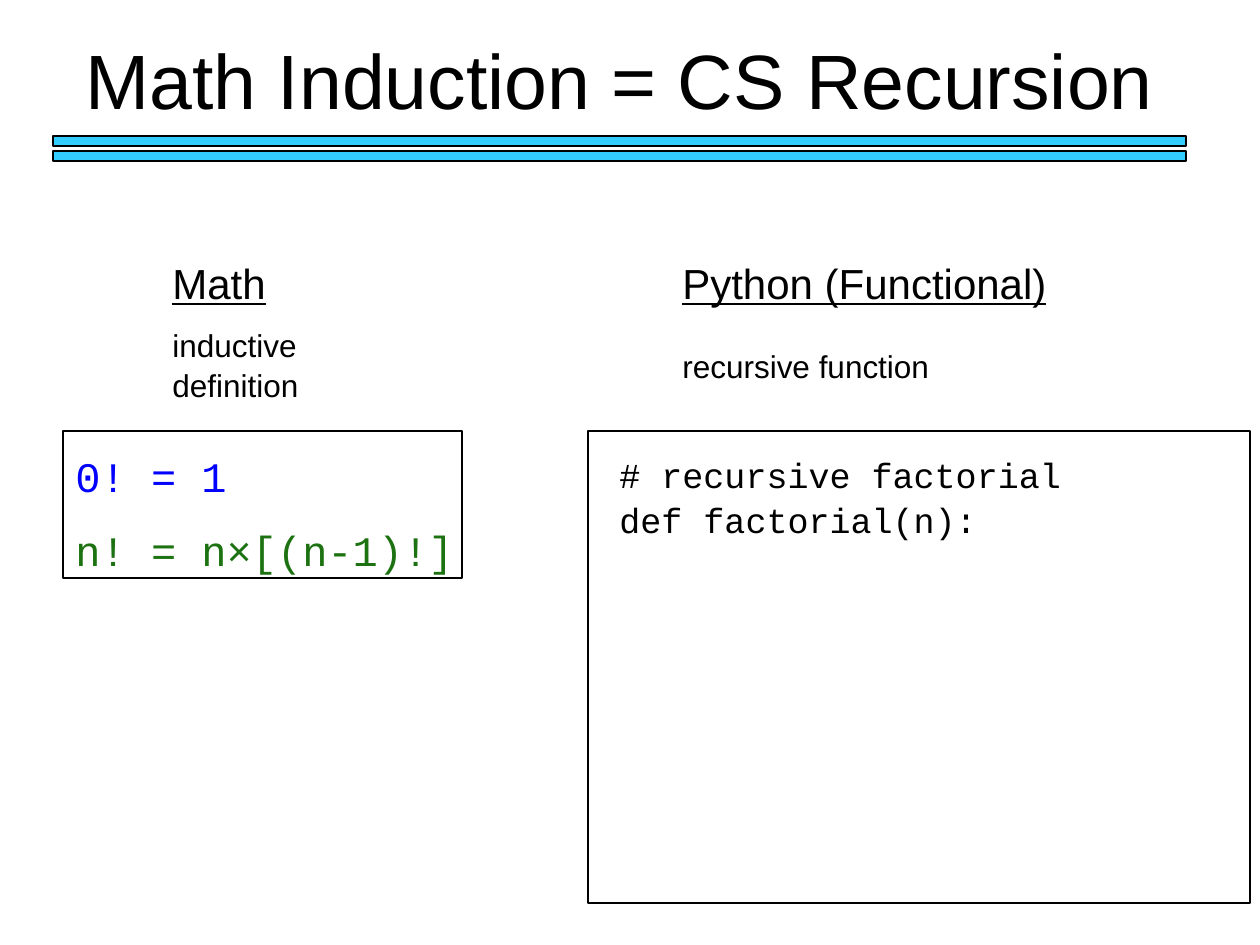
from pptx import Presentation
from pptx import util as u
from pptx.dml.color import RGBColor
from pptx.enum import shapes, text

PX = 914400 / 126
BLACK, BLUE, GREEN, SKY = "000000", "0000FF", "1C7210", "33CCFF"
SANS, MONO = "Arial", "Courier New"


def px(*lengths):
    return [u.Emu(round(length * PX)) for length in lengths]


def colour(hex_value):
    return RGBColor.from_string(hex_value)


def format_paragraph(paragraph, font, size, hex_value=BLACK, underline=False):
    for run in paragraph.runs:
        run.font.name = font
        run.font.size = u.Pt(size)
        run.font.color.rgb = colour(hex_value)
        run.font.underline = underline


def add_title(slide, words, box):
    title = slide.shapes.title
    title.left, title.top, title.width, title.height = px(*box)
    frame = title.text_frame
    frame.text = words
    frame.auto_size = text.MSO_AUTO_SIZE.NONE
    frame.vertical_anchor = text.MSO_ANCHOR.MIDDLE
    frame.paragraphs[0].alignment = text.PP_ALIGN.CENTER
    format_paragraph(frame.paragraphs[0], SANS, 44)


def add_box(container, box, fill=None):
    rectangle = container.add_shape(shapes.MSO_SHAPE.RECTANGLE, *px(*box))
    rectangle.shadow.inherit = False
    if fill:
        rectangle.fill.solid()
        rectangle.fill.fore_color.rgb = colour(fill)
    else:
        rectangle.fill.background()
    rectangle.line.color.rgb = colour(BLACK)
    rectangle.line.width = u.Pt(0.75)


def add_lines(slide, box, lines, gap=0, wrap=True):
    """Add a text box of (words, format) lines with gap points between them."""
    frame = slide.shapes.add_textbox(*px(*box)).text_frame
    frame.word_wrap = wrap
    frame.text = "\n".join(words for words, _ in lines)
    for index, (paragraph, (_, style)) in enumerate(zip(frame.paragraphs, lines)):
        paragraph.line_spacing = 1.06
        paragraph.space_before = u.Pt(gap if index else 0)
        format_paragraph(paragraph, *style)


def main():
    prs = Presentation()
    prs.slide_width, prs.slide_height = px(1260, 945)
    slide = prs.slides.add_slide(prs.slide_layouts[5])

    add_title(slide, "Math Induction = CS Recursion", (53, 0, 1134, 158))
    rule = slide.shapes.add_group_shape()
    for top in (136, 151):
        add_box(rule.shapes, (53, top, 1133, 10), SKY)

    heading, subheading = (SANS, 24, BLACK, True), (SANS, 18)
    code = (MONO, 20)
    add_lines(slide, (63, 441, 483, 140),
              [("0! = 1", (MONO, 24, BLUE)),
               ("n! = n×[(n-1)!]", (MONO, 24, GREEN))], gap=12)
    add_lines(slide, (160, 248, 238, 158),
              [("Math", heading), ("inductive definition", subheading)], gap=9)
    add_lines(slide, (670, 248, 389, 139),
              [("Python (Functional)", heading),
               ("recursive function", subheading)], gap=21, wrap=False)

    add_box(slide.shapes, (63, 431, 399, 147))
    add_box(slide.shapes, (588, 431, 662, 472))
    add_lines(slide, (607, 445, 471, 140),
              [("# recursive factorial", code), ("def factorial(n):", code)],
              wrap=False)

    prs.save("out.pptx")


if __name__ == "__main__":
    main()
